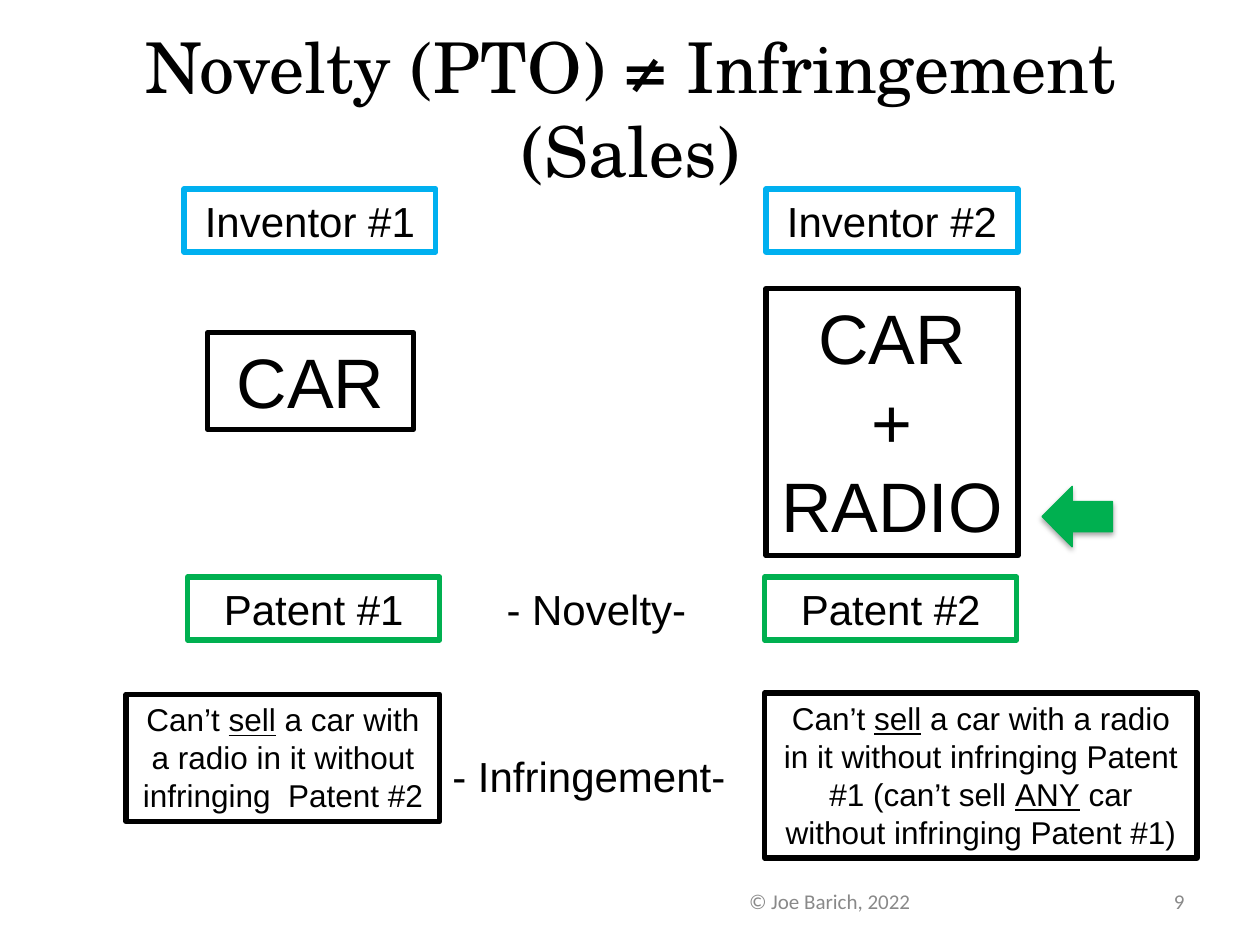
from lxml import etree
from pptx import Presentation
from pptx.dml.color import RGBColor
from pptx.enum.shapes import MSO_SHAPE
from pptx.enum.text import MSO_ANCHOR, PP_ALIGN
from pptx.oxml import parse_xml
from pptx.oxml.ns import nsdecls
from pptx.util import Inches, Pt

BLACK = RGBColor(0x00, 0x00, 0x00)
BLUE = RGBColor(0x00, 0xB0, 0xF0)
GREEN = RGBColor(0x00, 0xB0, 0x50)
GRAY = RGBColor(0x89, 0x89, 0x89)

SHADOW = (
    f'<a:effectLst {nsdecls("a")}>'
    '<a:outerShdw blurRad="39370" dist="22860" dir="5400000" rotWithShape="0">'
    '<a:srgbClr val="000000"><a:alpha val="35000"/></a:srgbClr>'
    '</a:outerShdw></a:effectLst>'
)


def write(shape, text, size, font="Arial", color=BLACK,
          align=PP_ALIGN.CENTER, anchor=MSO_ANCHOR.TOP):
    """Fill a shape with text; a part between underscores is underlined."""
    frame = shape.text_frame
    frame.word_wrap = True
    frame.vertical_anchor = anchor
    for i, line in enumerate(text.split("\n")):
        para = frame.add_paragraph() if i else frame.paragraphs[0]
        para.alignment = align
        for j, part in enumerate(line.split("_")):
            run = para.add_run()
            run.text = part
            run.font.size = Pt(size)
            run.font.name = font
            run.font.color.rgb = color
            if j % 2:
                run.font.underline = True


def add_label(slide, place, text, size, **style):
    box = slide.shapes.add_textbox(*map(Inches, place))
    write(box, text, size, **style)


def add_frame(slide, place, text, size, color=BLACK):
    box = slide.shapes.add_shape(MSO_SHAPE.RECTANGLE, *map(Inches, place))
    box.shadow.inherit = False
    box.fill.background()
    box.line.color.rgb = color
    box.line.width = Pt(3)
    write(box, text, size)


def add_arrow(slide, place):
    arrow = slide.shapes.add_shape(MSO_SHAPE.LEFT_ARROW, *map(Inches, place))
    arrow.fill.solid()
    arrow.fill.fore_color.rgb = GREEN
    arrow.line.color.rgb = GREEN
    arrow.line.width = Pt(0.75)
    arrow._element.spPr.append(parse_xml(SHADOW))


def main():
    deck = Presentation()
    deck.slide_width, deck.slide_height = Inches(10), Inches(7.5)
    slide = deck.slides.add_slide(deck.slide_layouts[6])

    add_label(slide, (0.25, 0.42, 9.51, 0.86),
              "Novelty (PTO) ≠ Infringement (Sales)", 40,
              font="TeX Gyre Schola", anchor=MSO_ANCHOR.MIDDLE)

    for num, left, low in ((1, 1.46, 1.49), (2, 6.08, 6.07)):
        add_frame(slide, (left, 1.5, 2, 0.5), f"Inventor #{num}", 24, BLUE)
        add_frame(slide, (low, 4.58, 2, 0.5), f"Patent #{num}", 24, GREEN)

    add_frame(slide, (1.65, 2.64, 1.63, 0.77), "CAR", 40)
    add_frame(slide, (6.08, 2.29, 2, 2.12), "CAR\n+\nRADIO", 40)
    add_arrow(slide, (8.27, 3.86, 0.56, 0.48))

    add_frame(slide, (1, 5.51, 2.49, 1.01),
              "Can’t _sell_ a car with a radio in it without "
              "infringing  Patent #2", 18)
    add_frame(slide, (6.07, 5.5, 3.43, 1.31),
              "Can’t _sell_ a car with a radio in it without infringing "
              "Patent #1 (can’t sell _ANY_ car without infringing Patent #1)",
              18)

    add_label(slide, (3.78, 4.58, 2, 0.5), "- Novelty- ", 24)
    add_label(slide, (3.46, 5.91, 2.52, 0.5), "- Infringement- ", 24)

    foot = dict(font="Calibri", color=GRAY, anchor=MSO_ANCHOR.MIDDLE)
    add_label(slide, (5, 6.95, 3.17, 0.4), "© Joe Barich, 2022", 12, **foot)
    add_label(slide, (8.33, 6.95, 1.17, 0.4), "9", 12,
              align=PP_ALIGN.RIGHT, **foot)

    deck.save("out.pptx")


if __name__ == "__main__":
    main()
